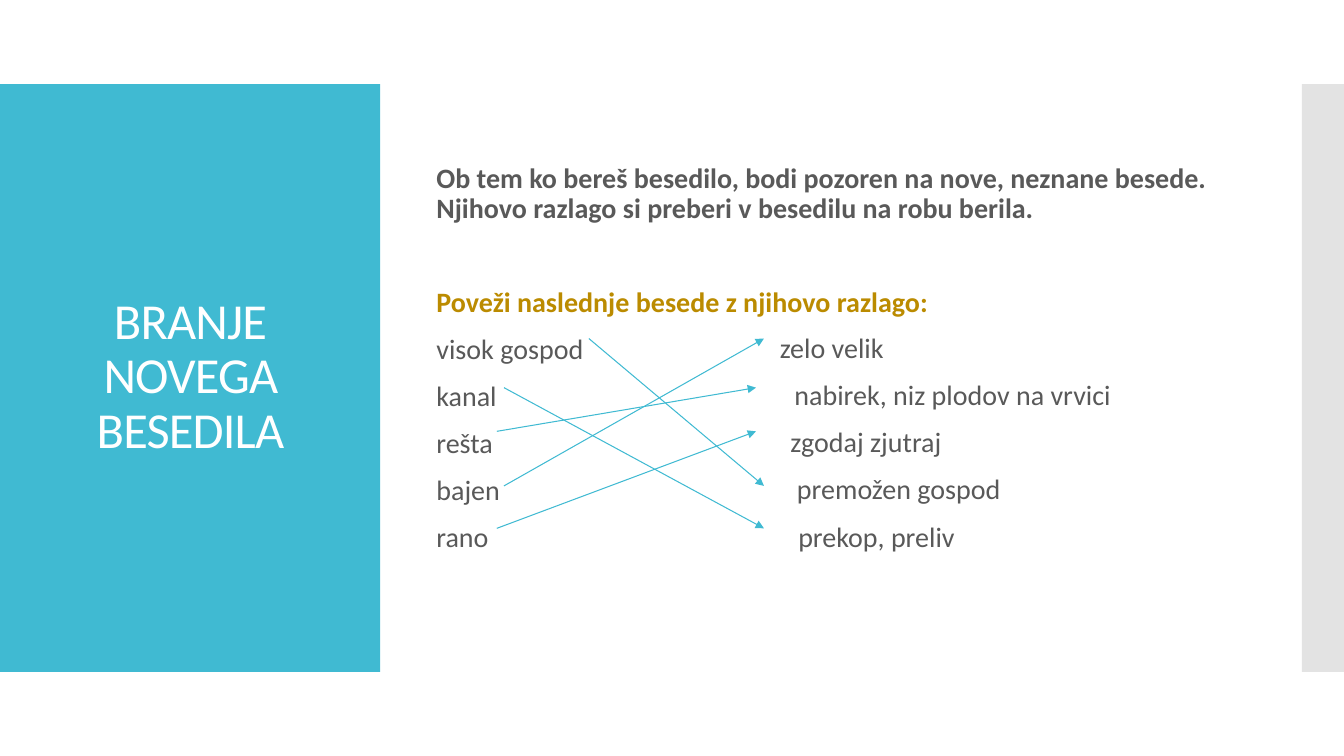
from dataclasses import dataclass

from lxml.etree import SubElement
from pptx import Presentation
from pptx.dml.color import RGBColor
from pptx.enum.shapes import MSO_CONNECTOR as Connector, MSO_SHAPE as Preset
from pptx.enum.text import MSO_ANCHOR as Anchor, MSO_AUTO_SIZE as AutoSize, PP_ALIGN as Align
from pptx.oxml.ns import qn
from pptx.util import Inches, Pt


@dataclass(frozen=True)
class Theme:
    font: str = "Calibri"
    accent: str = "40BAD2"
    band: str = "C8C8C8"
    text: str = "595959"
    heading: str = "BB8B00"
    light: str = "FFFFFF"
    title_size: int = 36
    body_size: int = 20
    line_spacing: float = 0.9
    gap: float = 12
    wide_gap: float = 45


@dataclass(frozen=True)
class Entry:
    word: str
    arrow_start: float
    meaning: str
    indent: float
    arrow_end: float
    arrow_row: float
    match: int


class SlideBuilder:
    """Places styled elements on a grid of 32 columns and 18 rows."""

    COLUMNS, ROWS = 32, 18

    def __init__(self, presentation, theme):
        self.theme = theme
        self.column = presentation.slide_width / self.COLUMNS
        self.row = presentation.slide_height / self.ROWS
        self.slide = presentation.slides.add_slide(presentation.slide_layouts[1])
        self.panel_count = 0

    def box(self, left, top, width, height):
        return (round(left * self.column), round(top * self.row),
                round(width * self.column), round(height * self.row))

    def panel(self, left, top, width, height, color, opacity=100):
        shape = self.slide.shapes.add_shape(Preset.RECTANGLE, *self.box(left, top, width, height))
        shape.shadow.inherit = False
        shape.fill.solid()
        shape.fill.fore_color.rgb = RGBColor.from_string(color)
        shape.line.fill.background()
        if opacity < 100:
            fill_color = shape.element.spPr.find(qn("a:solidFill"))[0]
            SubElement(fill_color, qn("a:alpha"), val=str(opacity * 1000))
        # Panels lie behind the placeholders
        self.slide.shapes.element.insert(2 + self.panel_count, shape.element)
        self.panel_count += 1

    def place(self, shape, *area):
        shape.left, shape.top, shape.width, shape.height = self.box(*area)
        frame = shape.text_frame
        frame.word_wrap = True
        frame.auto_size = AutoSize.NONE
        frame.vertical_anchor = Anchor.MIDDLE
        return frame

    def run(self, paragraph, text, size, color, bold=False):
        run = paragraph.add_run()
        run.text = text
        run.font.name = self.theme.font
        run.font.size = Pt(size)
        run.font.bold = bold
        run.font.color.rgb = RGBColor.from_string(color)
        return run

    def title(self, lines, *area):
        frame = self.place(self.slide.shapes.title, *area)
        paragraph = frame.paragraphs[0]
        paragraph.alignment = Align.CENTER
        paragraph.line_spacing = self.theme.line_spacing
        for index, line in enumerate(lines):
            if index:
                paragraph.add_line_break()
            run = self.run(paragraph, line, self.theme.title_size, self.theme.light)
            run.font._element.set("spc", "-60")

    def body(self, *area):
        frame = self.place(self.slide.placeholders[1], *area)
        frame.margin_top = Inches(0.26)
        return frame

    def text_box(self, *area):
        return self.place(self.slide.shapes.add_textbox(*self.box(*area)), *area)

    def line(self, frame, text, color=None, bold=False, gap=None, indent=0):
        paragraph = frame.paragraphs[-1]
        if paragraph.runs:
            paragraph = frame.add_paragraph()
        paragraph.alignment = Align.LEFT
        paragraph.line_spacing = self.theme.line_spacing
        paragraph.space_before = Pt(gap or self.theme.gap)
        paragraph.space_after = Pt(0)
        properties = paragraph._p.get_or_add_pPr()
        properties.set("marL", str(round(indent * self.column)))
        properties.set("indent", "0")
        SubElement(properties, qn("a:buNone"))
        self.run(paragraph, text, self.theme.body_size, color or self.theme.text, bold)

    def arrow(self, start, end):
        connector = self.slide.shapes.add_connector(Connector.STRAIGHT, *self.box(*start, *end))
        connector.line.width = Pt(0.75)
        connector.line.color.rgb = RGBColor.from_string(self.theme.accent)
        SubElement(connector.line._get_or_add_ln(), qn("a:tailEnd"), type="triangle")
        SubElement(connector.element.spPr, qn("a:effectLst"))


ENTRIES = [
    Entry("visok gospod", 14.02, "zelo velik", 0, 18.19, 8.06, 3),
    Entry("kanal", 12, "nabirek, niz plodov na vrvici", 0.35, 18, 9.23, 4),
    Entry("rešta", 11.83, "zgodaj zjutraj", 0.25, 18, 10.27, 1),
    Entry("bajen", 12, "premožen gospod", 0.41, 18.19, 11.57, 0),
    Entry("rano", 11.83, "prekop, preliv", 0.44, 18.19, 12.58, 2),
]


def main():
    presentation = Presentation()
    presentation.slide_width, presentation.slide_height = Inches(13.33), Inches(7.5)
    theme = Theme()
    builder = SlideBuilder(presentation, theme)

    # Side panels
    builder.panel(0, 2, 9.05, 14, theme.accent)
    builder.panel(31, 2, 1, 14, theme.band, opacity=50)

    # Title
    builder.title(["BRANJE", "NOVEGA BESEDILA"], 0.67, 2.95, 7.73, 12.07)

    # Instructions, words and their meanings
    body = builder.body(10.15, 2.26, 19.2, 12.07)
    builder.line(body, "Ob tem ko bereš besedilo, bodi pozoren na nove, neznane besede. "
                       "Njihovo razlago si preberi v besedilu na robu berila.", bold=True)
    builder.line(body, "Poveži naslednje besede z njihovo razlago:", theme.heading,
                 bold=True, gap=theme.wide_gap)
    meanings = builder.text_box(18.33, 7.07, 11, 7)
    for entry in ENTRIES:
        builder.line(body, entry.word)
        builder.line(meanings, entry.meaning, indent=entry.indent)

    # Arrows from each word to its meaning
    for entry in ENTRIES:
        target = ENTRIES[entry.match]
        builder.arrow((entry.arrow_start, entry.arrow_row), (target.arrow_end, target.arrow_row))

    presentation.save("out.pptx")


if __name__ == "__main__":
    main()
